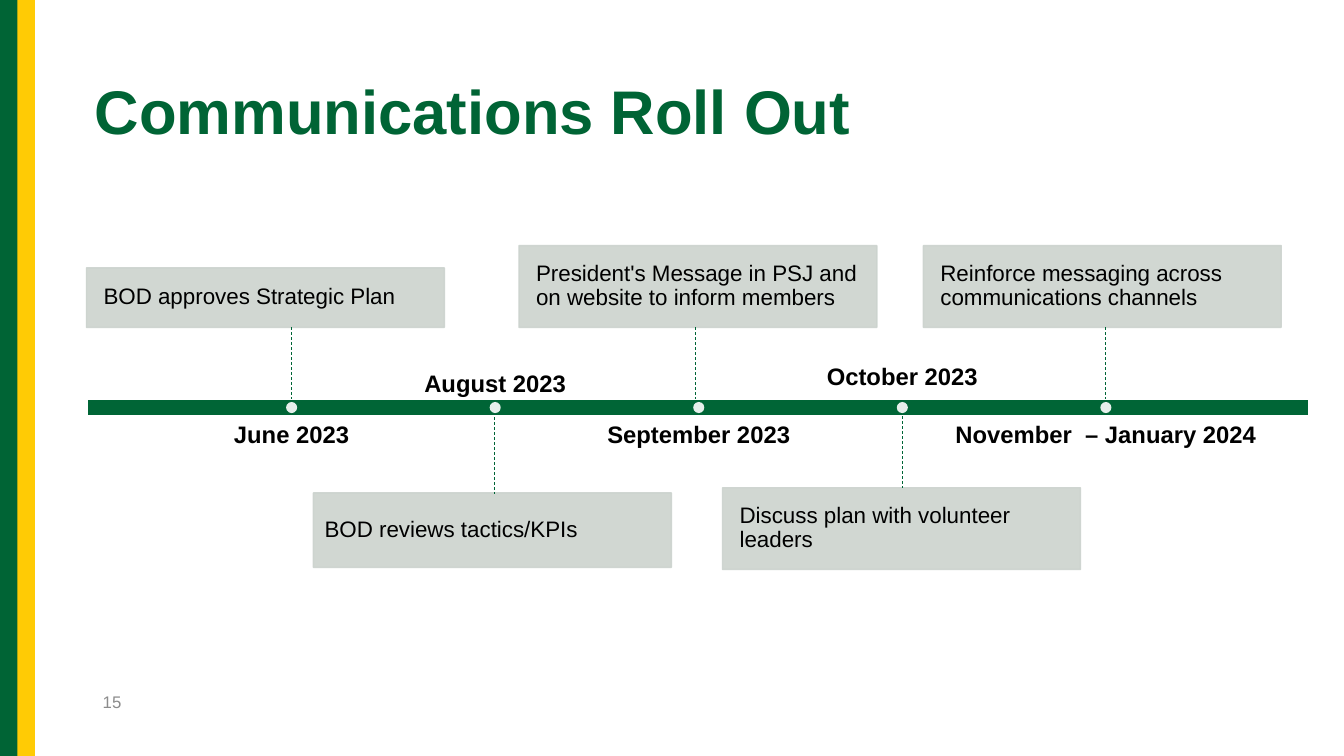
from dataclasses import dataclass

from lxml.etree import SubElement
from pptx import Presentation
from pptx.dml.color import RGBColor
from pptx.enum.dml import MSO_LINE
from pptx.enum.shapes import MSO_CONNECTOR, MSO_SHAPE as Shape
from pptx.enum.text import MSO_ANCHOR as Anchor, PP_ALIGN as Align
from pptx.oxml.ns import qn
from pptx.util import Cm, Pt


@dataclass(frozen=True)
class Theme:
    font: str = "Arial"
    green: str = "006435"
    axis: str = "006536"
    gold: str = "FFCB05"
    card: str = "CCD3CE"
    white: str = "FFFFFF"
    black: str = "000000"
    grey: str = "8C8C8C"
    title_size: int = 44
    month_size: int = 17
    card_size: int = 16
    number_size: int = 12


theme = Theme()


def write(shape, text, size, color, bold=False, align=Align.LEFT,
          anchor=Anchor.MIDDLE, inset=None, spacing=0.9):
    frame = shape.text_frame
    frame.word_wrap = True
    frame.vertical_anchor = anchor
    if inset is not None:
        frame.margin_left = frame.margin_right = Cm(inset)
        frame.margin_top = frame.margin_bottom = Cm(inset)
    para = frame.paragraphs[0]
    para.alignment = align
    para.line_spacing = spacing
    span = para.add_run()
    span.text = text
    span.font.name = theme.font
    span.font.size = Pt(size)
    span.font.bold = bold
    span.font.color.rgb = RGBColor.from_string(color)


def add_block(kind, left, top, width, height, color, line=None, line_width=1, opacity=100):
    block = slide.shapes.add_shape(kind, Cm(left), Cm(top), Cm(width), Cm(height))
    block.shadow.inherit = False
    block.fill.solid()
    block.fill.fore_color.rgb = RGBColor.from_string(color)
    if line:
        block.line.color.rgb = RGBColor.from_string(line)
        block.line.width = Pt(line_width)
    else:
        block.line.fill.background()
    if opacity < 100:
        for tint in block.element.spPr.iter(qn("a:srgbClr")):
            SubElement(tint, qn("a:alpha"), val=str(opacity * 1000))
    return block


deck = Presentation()
deck.slide_width, deck.slide_height = Cm(33.87), Cm(19.05)
slide = deck.slides.add_slide(deck.slide_layouts[5])

# Side stripes, title and page number
add_block(Shape.RECTANGLE, 0, 0, 0.53, 19.05, theme.green)
add_block(Shape.RECTANGLE, 0.44, 0, 0.44, 19.05, theme.gold)

title = slide.shapes.title
title.left, title.top, title.width, title.height = Cm(2.13), Cm(1.04), Cm(30.76), Cm(3.68)
write(title, "Communications Roll Out", theme.title_size, theme.green, bold=True)

number = slide.shapes.add_textbox(Cm(2.34), Cm(17.17), Cm(7.62), Cm(1.02))
write(number, "15", theme.number_size, theme.grey, spacing=1)

# Timeline: evenly spaced stops on one axis
add_block(Shape.RECTANGLE, 2.18, 10.06, 30.81, 0.43, theme.axis, theme.white, 1.5)

FIRST_STOP, STOP_STEP, AXIS_MIDDLE = 7.35, 5.13, 10.27
CARD_WIDTH, MONTH_WIDTH, DOT = 9.02, 8.2, 0.28
BELOW, ABOVE = Anchor.TOP, Anchor.BOTTOM

# month, its side, its top and height; card text, left, top, height, inset; stem x, top, bottom
milestones = [
    ("June 2023", BELOW, 10.67, 1.19,
     "BOD approves Strategic Plan", 2.18, 6.75, 1.5, 0.43, 7.34, 8.24, 10.06),
    ("August 2023", ABOVE, 9.37, 0.64,
     "BOD reviews tactics/KPIs", 7.9, 12.42, 1.88, 0.28, 12.46, 10.39, 12.44),
    ("September 2023", BELOW, 10.67, 1.19,
     "President's Message in PSJ and on website to inform members",
     13.08, 6.19, 2.06, 0.43, 17.53, 8.24, 10.06),
    ("October 2023", ABOVE, 8.66, 1.19,
     "Discuss plan with volunteer leaders", 18.21, 12.29, 2.06, 0.43, 22.73, 10.49, 12.29),
    ("November  – January 2024", BELOW, 10.67, 1.19,
     "Reinforce messaging across communications channels",
     23.27, 6.19, 2.06, 0.43, 27.86, 8.24, 10.06),
]

for i, (month, side, month_top, month_height, text, left, top, height, inset,
        stem_x, stem_top, stem_bottom) in enumerate(milestones):
    stop = FIRST_STOP + i * STOP_STEP

    label = slide.shapes.add_textbox(
        Cm(stop - MONTH_WIDTH / 2), Cm(month_top), Cm(MONTH_WIDTH), Cm(month_height))
    write(label, month, theme.month_size, theme.black, bold=True,
          align=Align.CENTER, anchor=side, inset=0)

    card = add_block(Shape.RECTANGLE, left, top, CARD_WIDTH, height,
                     theme.card, theme.card, opacity=90)
    write(card, text, theme.card_size, theme.black, inset=inset)

    stem = slide.shapes.add_connector(
        MSO_CONNECTOR.STRAIGHT, Cm(stem_x), Cm(stem_top), Cm(stem_x), Cm(stem_bottom))
    stem.line.color.rgb = RGBColor.from_string(theme.axis)
    stem.line.width = Pt(0.5)
    stem.line.dash_style = MSO_LINE.DASH
    SubElement(stem.element.spPr, qn("a:effectLst"))

    add_block(Shape.OVAL, stop - DOT / 2, AXIS_MIDDLE - DOT / 2, DOT, DOT,
              theme.white, opacity=90)

deck.save("out.pptx")
